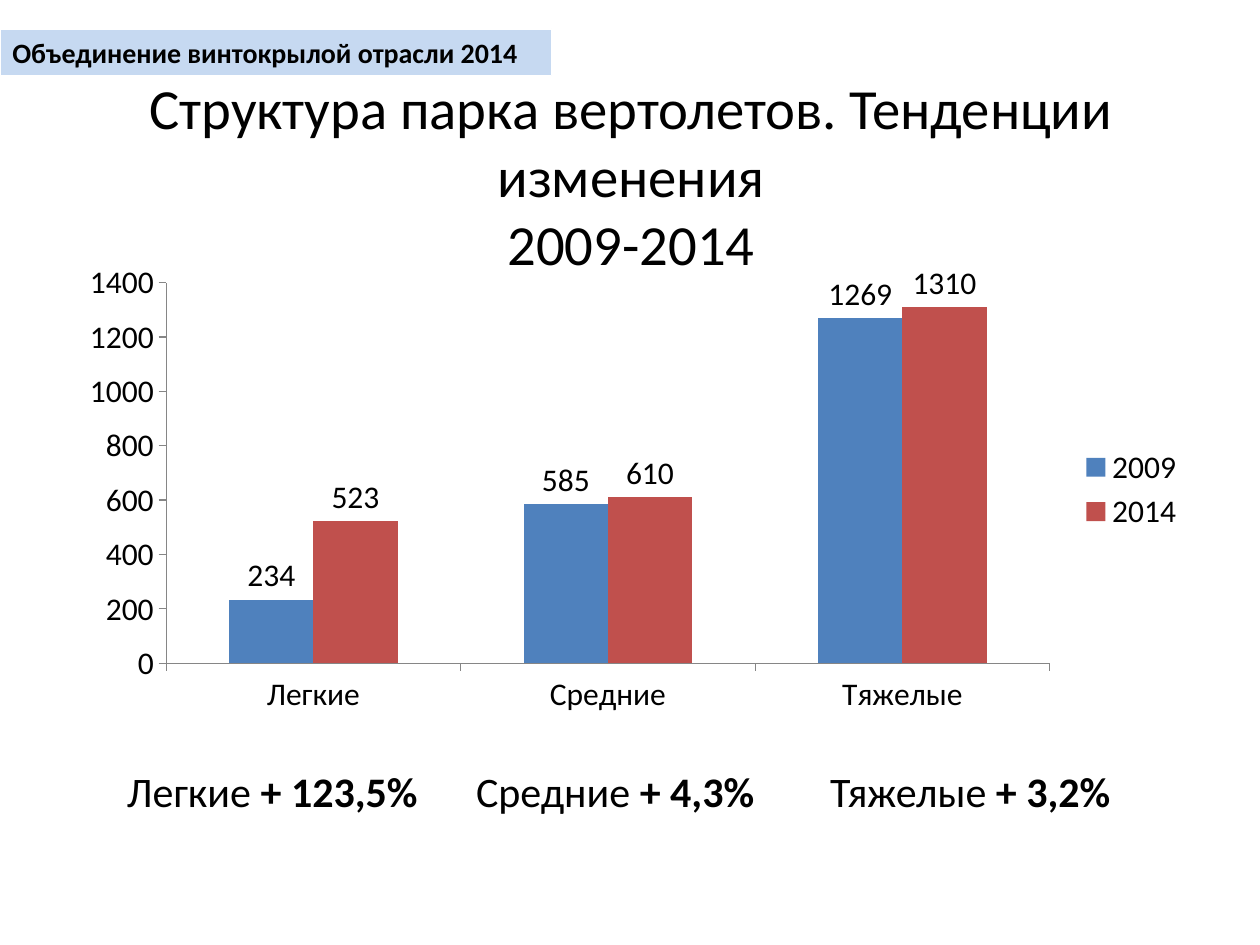
from lxml import etree
from pptx import Presentation
from pptx.chart.data import CategoryChartData
from pptx.dml.color import RGBColor
from pptx.enum.chart import XL_CHART_TYPE as ChartType, XL_LABEL_POSITION as LabelPos
from pptx.enum.chart import XL_LEGEND_POSITION as LegendPos, XL_TICK_MARK as Tick
from pptx.enum.shapes import MSO_SHAPE as Shape
from pptx.enum.text import MSO_ANCHOR as Anchor, PP_ALIGN as Align
from pptx.oxml import parse_xml
from pptx.oxml.ns import nsdecls, qn
from pptx.util import Inches, Pt

# Content
FONT = "Calibri"
COLORS = {"text": "000000", "banner": "C6D9F1", "border": "FFFFFF",
          "axis": "868686", "2009": "4F81BD", "2014": "C0504D"}
BANNER = "Объединение винтокрылой отрасли 2014"
TITLE = ["Структура парка вертолетов. Тенденции изменения", "2009-2014"]
CLASSES = ["Легкие", "Средние", "Тяжелые"]
FLEET = {"2009": (234, 585, 1269), "2014": (523, 610, 1310)}
GROWTH = ["+ 123,5%", "+ 4,3%", "+ 3,2%"]
GROWTH_TABS = [2.77, 5.58]
PLOT = {"x": 0.09, "y": 0.06, "w": 0.78, "h": 0.81}


def color(key):
    return RGBColor.from_string(COLORS[key])


def style(font, size, bold=False):
    font.name, font.size, font.bold = FONT, Pt(size), bold
    font.color.rgb = color("text")


def add_run(paragraph, text, size, bold=False):
    run = paragraph.add_run()
    run.text = text
    style(run.font, size, bold)


def box(left, top, width, height):
    return [Inches(v) for v in (left, top, width, height)]


def text_frame(shape):
    frame = shape.text_frame
    frame.word_wrap = True
    return frame


prs = Presentation()
prs.slide_width, prs.slide_height = Inches(10), Inches(7.5)
slide = prs.slides.add_slide(prs.slide_layouts[6])
shapes = slide.shapes

# Association banner
banner = shapes.add_shape(Shape.RECTANGLE, *box(0, 0.23, 4.38, 0.37))
banner.shadow.inherit = False
banner.fill.solid()
banner.fill.fore_color.rgb = color("banner")
banner.line.color.rgb = color("border")
banner.line.width = Pt(0.75)
banner_line = text_frame(banner).paragraphs[0]
banner_line.alignment = Align.LEFT
add_run(banner_line, BANNER, 16, True)

# Title
title = text_frame(shapes.add_textbox(*box(0.51, 0.76, 9, 1.25)))
title.vertical_anchor = Anchor.MIDDLE
heading = title.paragraphs[0]
heading.alignment = Align.CENTER
add_run(heading, TITLE[0], 32.4)
heading.add_line_break()
add_run(heading, TITLE[1], 32.4)

# Fleet chart
data = CategoryChartData()
data.categories = CLASSES
for year, counts in FLEET.items():
    data.add_series(year, counts)
chart = shapes.add_chart(ChartType.COLUMN_CLUSTERED, *box(0.51, 2.02, 8.99, 3.73), data).chart
style(chart.font, 18)
chart.has_title = False
chart.has_legend = True
chart.legend.position = LegendPos.RIGHT
chart.legend.include_in_layout = False

columns = chart.plots[0]
columns.gap_width, columns.overlap, columns.vary_by_categories = 150, 0, False
for series in columns.series:
    series.format.fill.solid()
    series.format.fill.fore_color.rgb = color(series.name)
    labels = series.data_labels
    labels.show_value = True
    labels.position = LabelPos.OUTSIDE_END
    style(labels.font, 18)

for axis in (chart.category_axis, chart.value_axis):
    axis.has_major_gridlines = False
    axis.major_tick_mark, axis.minor_tick_mark = Tick.OUTSIDE, Tick.NONE
    axis.format.line.color.rgb = color("axis")
    axis.format.line.width = Pt(0.75)
chart.value_axis.minimum_scale, chart.value_axis.maximum_scale = 0, 1400
chart.value_axis.major_unit = 200

# Fixed inner plot area
modes = '<c:layoutTarget val="inner"/><c:xMode val="edge"/><c:yMode val="edge"/>'
sizes = "".join(f'<c:{side} val="{share}"/>' for side, share in PLOT.items())
plot_area = chart.plots[0]._element.getparent()
for layout in plot_area.findall(qn("c:layout")):
    plot_area.remove(layout)
plot_area.insert(0, parse_xml(
    f'<c:layout {nsdecls("c")}><c:manualLayout>{modes}{sizes}</c:manualLayout></c:layout>'))

# Growth by class, spaced by tab stops
growth = text_frame(shapes.add_textbox(*box(0.91, 6.03, 8.03, 0.5))).paragraphs[0]
growth.alignment = Align.LEFT
tab_list = etree.SubElement(growth._p.get_or_add_pPr(), qn("a:tabLst"))
for position in GROWTH_TABS:
    etree.SubElement(tab_list, qn("a:tab"), pos=str(Inches(position)), algn="l")
for i, (name, change) in enumerate(zip(CLASSES, GROWTH)):
    add_run(growth, ("\t" if i else "") + name + " ", 24)
    add_run(growth, change, 24, True)

prs.save("out.pptx")
